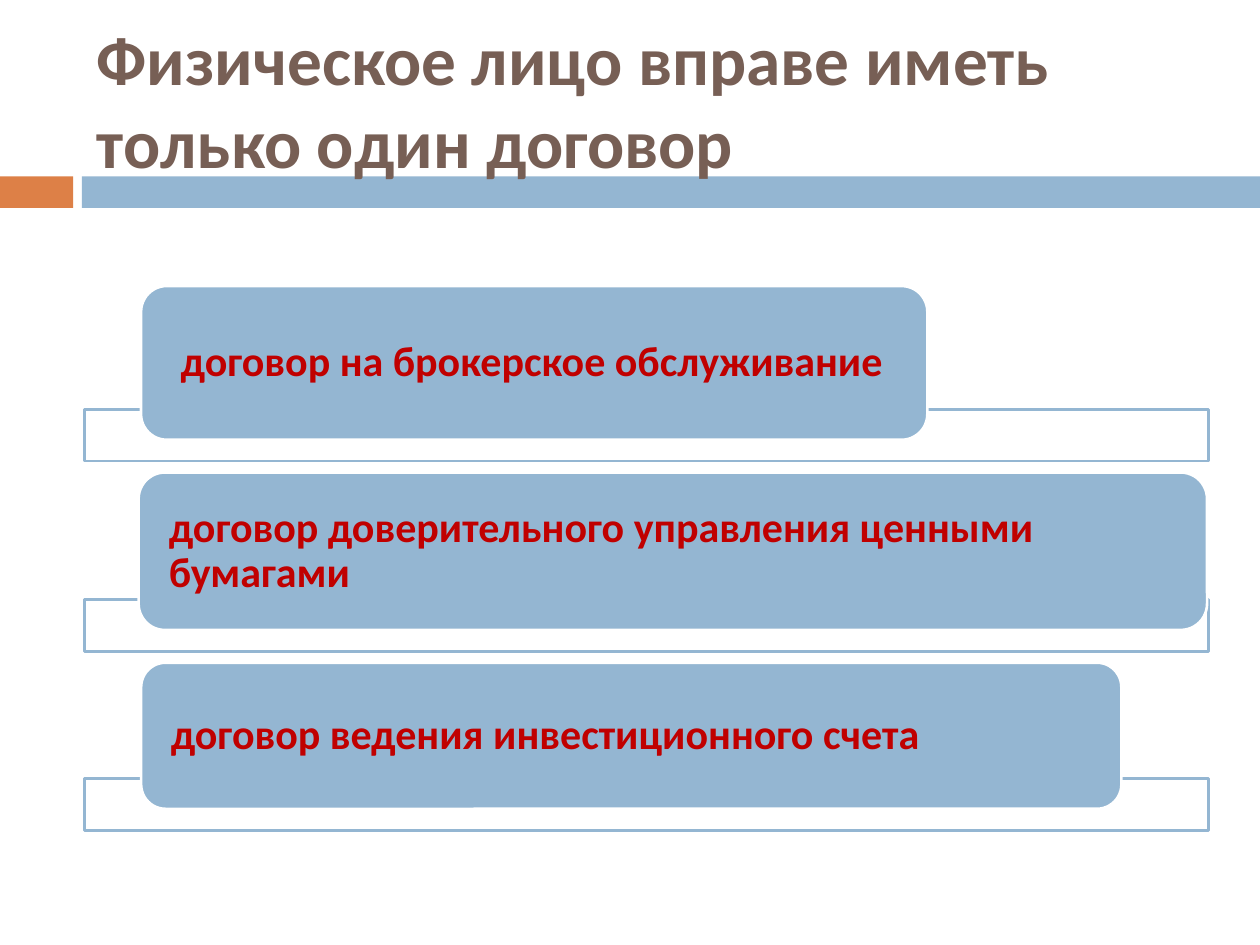
from pptx import Presentation
from pptx.dml.color import RGBColor
from pptx.enum.shapes import MSO_SHAPE
from pptx.enum.text import MSO_ANCHOR, PP_ALIGN
from pptx.oxml.ns import qn
from pptx.util import Inches, Pt
from lxml.etree import SubElement

BLUE, ORANGE, BROWN, RED, WHITE = "94B6D2", "DD8047", "775F55", "C00000", "FFFFFF"


def paint(target, color):
    target.rgb = RGBColor.from_string(color)


def add_box(slide, kind, box, fill, line=None, alpha=None):
    shape = slide.shapes.add_shape(kind, *map(Inches, box))
    shape.shadow.inherit = False
    shape.fill.solid()
    paint(shape.fill.fore_color, fill)
    if alpha is not None:
        color = shape.fill._xPr.find(qn("a:solidFill"))[0]
        SubElement(color, qn("a:alpha"), val=str(alpha * 1000))
    if line:
        paint(shape.line.color, line)
        shape.line.width = Pt(1.5)
    else:
        shape.line.fill.background()
    return shape


def add_text(shape, text, size=24, color=RED, inset=(0.1, 0.05), spacing=1.0):
    frame = shape.text_frame
    frame.word_wrap = True
    frame.vertical_anchor = MSO_ANCHOR.MIDDLE
    frame.margin_left = frame.margin_right = Inches(inset[0])
    frame.margin_top = frame.margin_bottom = Inches(inset[1])
    para = frame.paragraphs[0]
    para.alignment = PP_ALIGN.LEFT
    para.line_spacing = spacing
    run = para.add_run()
    run.text = text
    font = run.font
    font.name, font.size, font.bold = "Calibri", Pt(size), True
    paint(font.color, color)


def add_header(slide, box, title):
    left, top, width, height = box
    # Accent block and band beneath the title
    add_box(slide, MSO_SHAPE.RECTANGLE, (0, 1.4, 0.58, 0.25), ORANGE)
    add_box(slide, MSO_SHAPE.RECTANGLE, (0.65, 1.4, 9.35, 0.25), BLUE)
    # Title
    label = slide.shapes.add_textbox(*map(Inches, (left, top, width, height)))
    add_text(label, title, size=39.6, color=BROWN)


def add_list(slide, box, items):
    left, top, width, _ = box
    for text, shift, drop, wide, tall in items:
        # Outlined bar, its top 0.24 above the foot of the card
        bar = (left, top + drop + tall - 0.24, width, 0.41)
        add_box(slide, MSO_SHAPE.RECTANGLE, bar, WHITE, line=BLUE, alpha=90)
        # Rounded card with the contract name
        card = add_box(slide, MSO_SHAPE.ROUNDED_RECTANGLE,
                       (left + shift, top + drop, wide, tall), BLUE, line=WHITE)
        add_text(card, text, inset=(0.18, 0), spacing=0.9)


def main():
    deck = Presentation()
    deck.slide_width, deck.slide_height = Inches(10), Inches(7.5)
    slide = deck.slides.add_slide(deck.slide_layouts[6])
    add_header(slide, (0.67, 0.25, 8.92, 1.08),
               "Физическое лицо вправе иметь только один договор")
    # Text, shift from left, drop from top, width, height
    add_list(slide, (0.67, 2.27, 8.92, 4.31), [
        (" договор на брокерское обслуживание", 0.45, 0, 6.24, 1.22),
        ("договор доверительного управления ценными бумагами",
         0.43, 1.48, 8.48, 1.25),
        ("договор ведения инвестиционного счета", 0.45, 2.99, 7.78, 1.16),
    ])
    deck.save("out.pptx")


if __name__ == "__main__":
    main()
